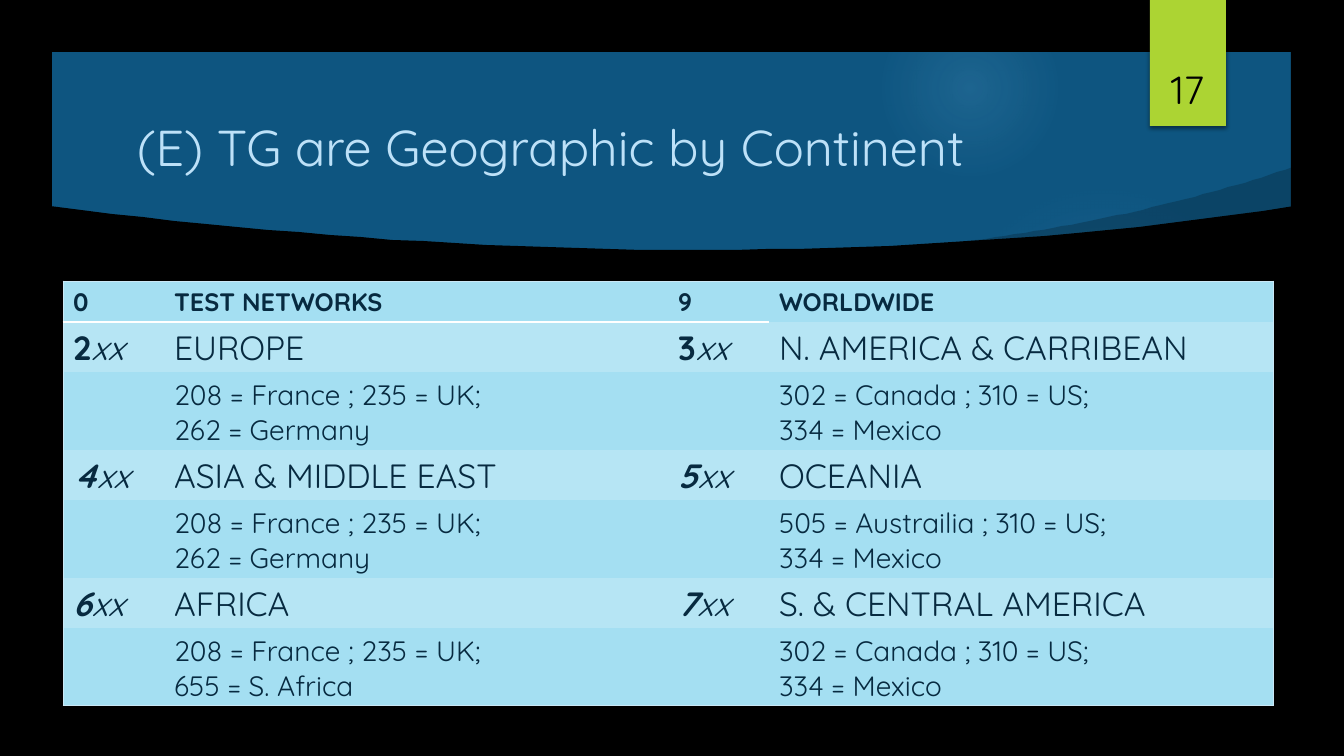
from dataclasses import dataclass

import pptx
import pptx.dml.color
import pptx.enum.shapes
import pptx.enum.text
import pptx.oxml
import pptx.oxml.ns
import pptx.util

Point = tuple[int, int]
MIDDLE = pptx.enum.text.MSO_ANCHOR.MIDDLE
BOTTOM = pptx.enum.text.MSO_ANCHOR.BOTTOM
LEFT = pptx.enum.text.PP_ALIGN.LEFT
CENTER = pptx.enum.text.PP_ALIGN.CENTER
PLAIN_TABLE = "{2D5ABB26-0587-4C30-8999-92F81FD0307C}"


@dataclass(frozen=True)
class Theme:
    font: str = "Quicksand"
    blue: str = "0E5580"
    black: str = "000000"
    white: str = "FFFFFF"
    glow: str = "7AC4F0"
    lime: str = "ACD433"
    title: str = "BDE1F8"
    ink: str = "072A40"
    band: str = "A4DFF2"
    light_band: str = "B6E5F4"
    edge: str = "CAE8F6"
    title_size: int = 36
    number_size: int = 28
    region_size: int = 24
    country_size: int = 20
    header_size: int = 18


@dataclass(frozen=True)
class Box:
    left: int
    top: int
    width: int
    height: int


@dataclass(frozen=True)
class Glow:
    box: Box
    stops: tuple[tuple[int, int], ...]  # position and opacity, in percent


@dataclass(frozen=True)
class Span:
    text: str
    size: int
    color: str
    bold: bool = False
    italic: bool = False


@dataclass(frozen=True)
class Region:
    digit: str
    name: str
    countries: tuple[str, str]
    slanted: bool = True


THEME = Theme()
SLIDE = Box(0, 0, 1344, 756)
TABLE = Box(63, 281, 1210, 424)
COLUMNS = (101, 504, 101, 504)
ROW_HEIGHT = 41

GLOWS = (
    Glow(Box(949, 184, 310, 310), ((0, 7), (36, 6), (69, 0), (100, 0))),
    Glow(Box(882, 0, 176, 176), ((0, 14), (36, 7), (73, 0), (100, 0))),
)
HEADER = ("0", "TEST NETWORKS", "9", "WORLDWIDE")
EUROPE = ("208 = France ; 235 = UK;", "262 = Germany")
AMERICA = ("302 = Canada ; 310 = US;", "334 = Mexico")
REGIONS = (
    (Region("2", "EUROPE", EUROPE, False),
     Region("3", "N. AMERICA & CARRIBEAN", AMERICA, False)),
    (Region("4", "ASIA & MIDDLE EAST", EUROPE),
     Region("5", "OCEANIA", ("505 = Austrailia ; 310 = US;", "334 = Mexico"))),
    (Region("6", "AFRICA", ("208 = France ; 235 = UK;", "655 = S. Africa")),
     Region("7", "S. & CENTRAL AMERICA", AMERICA)),
)


def px(length: int) -> pptx.util.Emu:
    return pptx.util.Emu(round(length * 914400 / 100.8))


def place(box: Box) -> tuple[pptx.util.Emu, ...]:
    return px(box.left), px(box.top), px(box.width), px(box.height)


def rgb(color: str) -> pptx.dml.color.RGBColor:
    return pptx.dml.color.RGBColor.from_string(color)


def xml(markup: str):
    head, tail = markup.split(" ", 1)
    return pptx.oxml.parse_xml(f"{head} {pptx.oxml.ns.nsdecls('a')} {tail}")


def curve(a: Point, b: Point, c: Point, d: Point, steps: int = 40) -> list[Point]:
    """Points along a cubic curve from a to d, pulled by b and c."""
    def blend(t: float, i: int) -> int:
        s = 1 - t
        return round(s**3 * a[i] + 3 * s * s * t * b[i] + 3 * s * t * t * c[i] + t**3 * d[i])
    return [(blend(n / steps, 0), blend(n / steps, 1)) for n in range(steps + 1)]


def paint(shape, color: str) -> None:
    shape.shadow.inherit = False
    shape.fill.solid()
    shape.fill.fore_color.rgb = rgb(color)
    shape.line.fill.background()


def add_outline(page, color: str, *contours: list[Point]):
    scale = 914400 / 100.8
    builder = page.shapes.build_freeform(*contours[0][0], scale=scale)
    builder.add_line_segments(contours[0][1:], close=True)
    for contour in contours[1:]:
        builder.move_to(*contour[0])
        builder.add_line_segments(contour[1:], close=True)
    shape = builder.convert_to_shape()
    paint(shape, color)
    return shape


def add_glow(page, glow: Glow) -> None:
    oval = page.shapes.add_shape(pptx.enum.shapes.MSO_SHAPE.OVAL, *place(glow.box))
    paint(oval, THEME.glow)
    stops = "".join(
        f'<a:gs pos="{at * 1000}"><a:srgbClr val="{THEME.glow}">'
        f'<a:alpha val="{opacity * 1000}"/></a:srgbClr></a:gs>'
        for at, opacity in glow.stops)
    solid = oval._element.spPr.find(pptx.oxml.ns.qn("a:solidFill"))
    solid.getparent().replace(solid, xml(
        f'<a:gradFill rotWithShape="1"><a:gsLst>{stops}</a:gsLst><a:path path="circle">'
        '<a:fillToRect l="50000" t="50000" r="50000" b="50000"/></a:path></a:gradFill>'))


def write(frame, paragraphs: list[list[Span]], align=LEFT) -> None:
    for index, spans in enumerate(paragraphs):
        para = frame.add_paragraph() if index else frame.paragraphs[0]
        para.alignment = align
        for span in spans:
            run = para.add_run()
            run.text = span.text
            run.font.name = THEME.font
            run.font.size = pptx.util.Pt(span.size)
            run.font.bold = span.bold
            run.font.italic = span.italic
            run.font.color.rgb = rgb(span.color)


def add_text(page, box: Box, span: Span, anchor, align=LEFT) -> None:
    frame = page.shapes.add_textbox(*place(box)).text_frame
    frame.word_wrap = True
    frame.vertical_anchor = anchor
    write(frame, [[span]], align)


def table_rows() -> list[list[list[list[Span]]]]:
    rows = [[[[Span(text, THEME.header_size, THEME.ink, bold=True)]] for text in HEADER]]
    for pair in REGIONS:
        names, countries = [], []
        for region in pair:
            size = THEME.region_size
            names += [[[Span(region.digit, size, THEME.ink, True, region.slanted),
                        Span("xx", size, THEME.ink, italic=True)]],
                      [[Span(region.name, size, THEME.ink)]]]
            countries += [[], [[Span(line, THEME.country_size, THEME.ink)]
                               for line in region.countries]]
        rows += [names, countries]
    return rows


def add_border(cell, side: str, color: str, points: float) -> None:
    cell._tc.get_or_add_tcPr().append(xml(
        f'<a:ln{side} w="{round(points * 12700)}"><a:solidFill>'
        f'<a:srgbClr val="{color}"/></a:solidFill></a:ln{side}>'))


def add_table(page) -> None:
    rows = table_rows()
    holder = page.shapes.add_table(len(rows), len(COLUMNS), *place(TABLE))
    table = holder.table
    table.first_row = table.horz_banding = False
    table._tbl.tblPr.find(pptx.oxml.ns.qn("a:tableStyleId")).text = PLAIN_TABLE
    for column, width in zip(table.columns, COLUMNS):
        column.width = px(width)
    last_row, last_column = len(rows) - 1, len(COLUMNS) - 1
    for r, row in enumerate(rows):
        table.rows[r].height = px(ROW_HEIGHT)
        for c, paragraphs in enumerate(row):
            cell = table.cell(r, c)
            write(cell.text_frame, paragraphs)
            edges = {"L": c == 0, "R": c == last_column, "T": r == 0, "B": r == last_row}
            for side, outer in edges.items():
                if outer:
                    add_border(cell, side, THEME.edge, 0.75)
            if r == 0 and c < last_column:
                add_border(cell, "B", THEME.white, 2.25)
            cell.fill.solid()
            cell.fill.fore_color.rgb = rgb(THEME.light_band if r % 2 else THEME.band)
    holder.height = px(TABLE.height)


def add_backdrop(page) -> None:
    page.background.fill.solid()
    page.background.fill.fore_color.rgb = rgb(THEME.blue)
    for glow in GLOWS:
        add_glow(page, glow)
    # Dark sweep at the right of the banner
    sweep = curve((937, 245), (1070, 229), (1188, 203), (1293, 167))
    shade = add_outline(page, THEME.black, sweep + [(1299, 216), (941, 252)])
    shade.fill._xPr.find(".//" + pptx.oxml.ns.qn("a:srgbClr")).append(
        xml('<a:alpha val="20000"/>'))
    # Black area under the curved banner edge
    rim = curve((50, 206), (465, 259), (880, 270), (1294, 206))
    add_outline(page, THEME.black, rim + [(1294, 706), (50, 706)])
    # Black frame around the slide
    add_outline(page, THEME.black,
                [(0, 0), (0, SLIDE.height), (SLIDE.width, SLIDE.height), (SLIDE.width, 0)],
                [(52, 52), (1291, 52), (1291, 704), (52, 704)])


def add_number_tab(page) -> None:
    tab = page.shapes.add_shape(pptx.enum.shapes.MSO_SHAPE.RECTANGLE, *place(Box(1150, 0, 76, 126)))
    paint(tab, THEME.lime)
    tab._element.spPr.find(pptx.oxml.ns.qn("a:effectLst")).append(xml(
        '<a:outerShdw blurRad="38100" dist="25400" dir="5400000" rotWithShape="0">'
        f'<a:srgbClr val="{THEME.black}"><a:alpha val="45000"/></a:srgbClr></a:outerShdw>'))


def main() -> None:
    deck = pptx.Presentation()
    deck.slide_width, deck.slide_height = px(SLIDE.width), px(SLIDE.height)
    page = deck.slides.add_slide(deck.slide_layouts[6])
    add_backdrop(page)
    add_number_tab(page)
    add_text(page, Box(127, 107, 966, 78),
             Span("(E) TG are Geographic by Continent", THEME.title_size, THEME.title), MIDDLE)
    add_table(page)
    add_text(page, Box(1141, 32, 93, 85),
             Span("17", THEME.number_size, THEME.black), BOTTOM, CENTER)
    deck.save("out.pptx")


if __name__ == "__main__":
    main()
